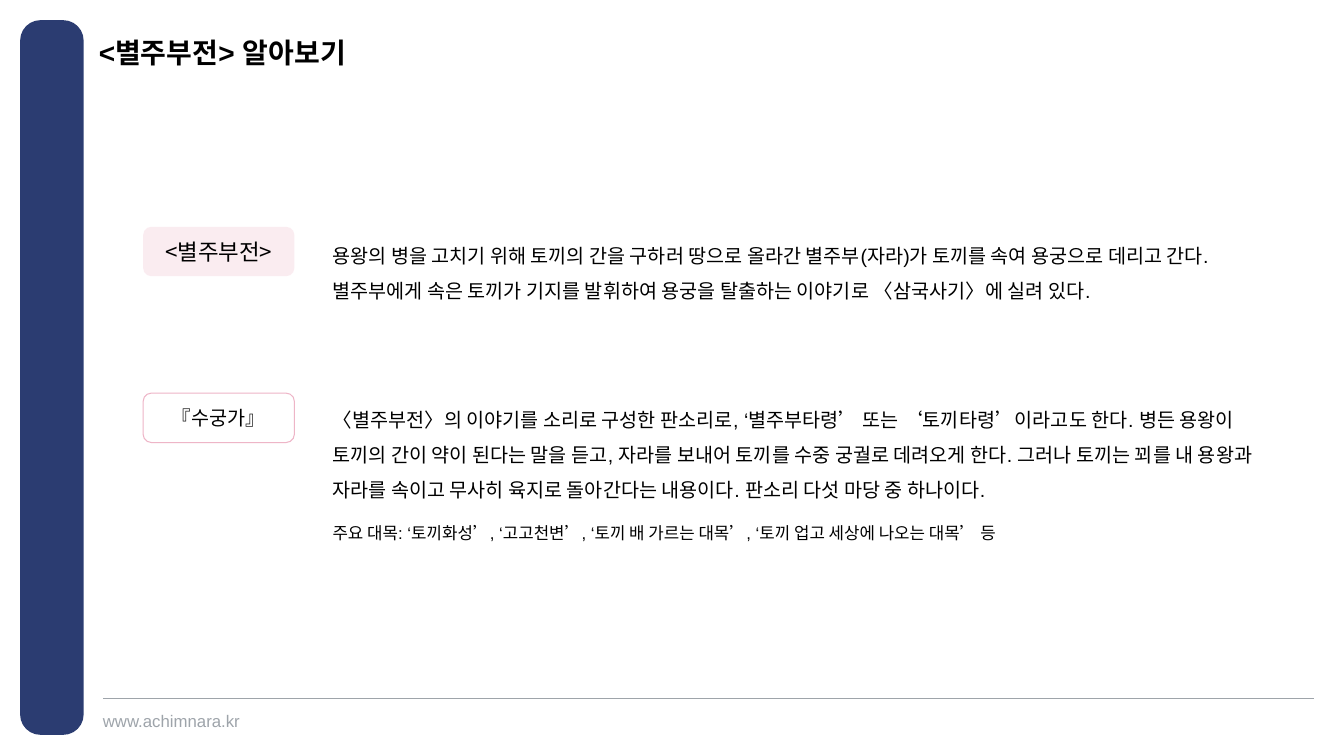
from lxml import etree
from pptx import Presentation
from pptx.dml.color import RGBColor
from pptx.enum.shapes import MSO_CONNECTOR, MSO_SHAPE
from pptx.enum.text import MSO_ANCHOR, PP_ALIGN
from pptx.oxml.ns import qn
from pptx.util import Inches, Pt

COLORS = {
    "navy": "2B3C71",
    "grey": "9EA4AA",
    "black": "000000",
    "pink": "F7DAE3",
    "rose": "EEB5C7",
}
LATIN = "Arial"
KOREAN = "Noto Sans CJK KR"

LABEL_LEFT, BODY_LEFT = 1.42, 3.2


def rgb(name):
    return RGBColor.from_string(COLORS[name])


def set_text(tf, text, size, color="black", font=LATIN, bold=False, spacing=None):
    p = tf.paragraphs[0]
    p.text = text
    p.font.size = Pt(size)
    p.font.bold = bold
    p.font.color.rgb = rgb(color)
    p.font.name = font
    ea = etree.SubElement(p._p.pPr.find(qn("a:defRPr")), qn("a:ea"))
    ea.set("typeface", KOREAN)
    if spacing:
        p.line_spacing = spacing
    return p


def add_text(slide, x, y, w, h, text, size, inset=True, **style):
    tf = slide.shapes.add_textbox(Inches(x), Inches(y), Inches(w), Inches(h)).text_frame
    tf.word_wrap = True
    if not inset:
        tf.margin_left = tf.margin_right = tf.margin_top = tf.margin_bottom = 0
    set_text(tf, text, size, **style)


def add_round_rect(slide, x, y, w, h, fill=None, line=None):
    sp = slide.shapes.add_shape(
        MSO_SHAPE.ROUNDED_RECTANGLE, Inches(x), Inches(y), Inches(w), Inches(h))
    sp.shadow.inherit = False
    if fill:
        sp.fill.solid()
        sp.fill.fore_color.rgb = rgb(fill)
    else:
        sp.fill.background()
    if line:
        sp.line.color.rgb = rgb(line)
        sp.line.width = Pt(0.75)
    else:
        sp.line.fill.background()
    return sp


def add_label(slide, y, text, size, fill=None, line=None):
    sp = add_round_rect(slide, LABEL_LEFT, y, 1.5, 0.49, fill, line)
    tf = sp.text_frame
    tf.vertical_anchor = MSO_ANCHOR.MIDDLE
    set_text(tf, text, size, font=KOREAN).alignment = PP_ALIGN.CENTER
    return sp


def set_alpha(sp, percent):
    color = sp._element.spPr.find(qn("a:solidFill"))[0]
    etree.SubElement(color, qn("a:alpha")).set("val", str(percent * 1000))


def add_rule(slide, x1, x2, y):
    line = slide.shapes.add_connector(
        MSO_CONNECTOR.STRAIGHT, Inches(x1), Inches(y), Inches(x2), Inches(y))
    line.line.color.rgb = rgb("grey")
    line.line.width = Pt(0.5)
    etree.SubElement(line._element.spPr, qn("a:effectLst"))


def main():
    prs = Presentation()
    prs.slide_width, prs.slide_height = Inches(13.33), Inches(7.5)
    slide = prs.slides.add_slide(prs.slide_layouts[6])

    # Side bar and footer
    bar = add_round_rect(slide, 0.2, 0.2, 0.63, 7.09, fill="navy")
    bar.adjustments[0] = 0.321
    add_rule(slide, 13.03, 1.02, 6.93)
    add_text(slide, 1.02, 7.05, 1.5, 0.2, "www.achimnara.kr", 12,
             inset=False, color="grey")

    # Title
    add_text(slide, 0.98, 0.39, 7.87, 0.28, "<별주부전> 알아보기", 20,
             inset=False, bold=True, spacing=0.9)

    # The tale
    tale = add_label(slide, 2.25, "<별주부전>", 16, fill="pink")
    set_alpha(tale, 50)
    add_text(slide, BODY_LEFT, 2.25, 9.26, 0.76,
             "용왕의 병을 고치기 위해 토끼의 간을 구하러 땅으로 올라간 별주부(자라)가 "
             "토끼를 속여 용궁으로 데리고 간다. 별주부에게 속은 토끼가 기지를 발휘하여 "
             "용궁을 탈출하는 이야기로 〈삼국사기〉에 실려 있다.", 14, spacing=1.5)

    # The pansori
    add_label(slide, 3.9, "『수궁가』", 14, line="rose")
    add_text(slide, BODY_LEFT, 3.88, 9.36, 1.12,
             "〈별주부전〉의 이야기를 소리로 구성한 판소리로, ‘별주부타령’ 또는 "
             "‘토끼타령’이라고도 한다. 병든 용왕이 토끼의 간이 약이 된다는 말을 듣고, "
             "자라를 보내어 토끼를 수중 궁궐로 데려오게 한다. 그러나 토끼는 꾀를 내 "
             "용왕과 자라를 속이고 무사히 육지로 돌아간다는 내용이다. "
             "판소리 다섯 마당 중 하나이다.", 14, spacing=1.5)
    add_text(slide, BODY_LEFT, 5.04, 9.26, 0.36,
             "주요 대목: ‘토끼화성’, ‘고고천변’, ‘토끼 배 가르는 대목’, "
             "‘토끼 업고 세상에 나오는 대목’ 등", 12, spacing=1.5)

    prs.save("out.pptx")


if __name__ == "__main__":
    main()
